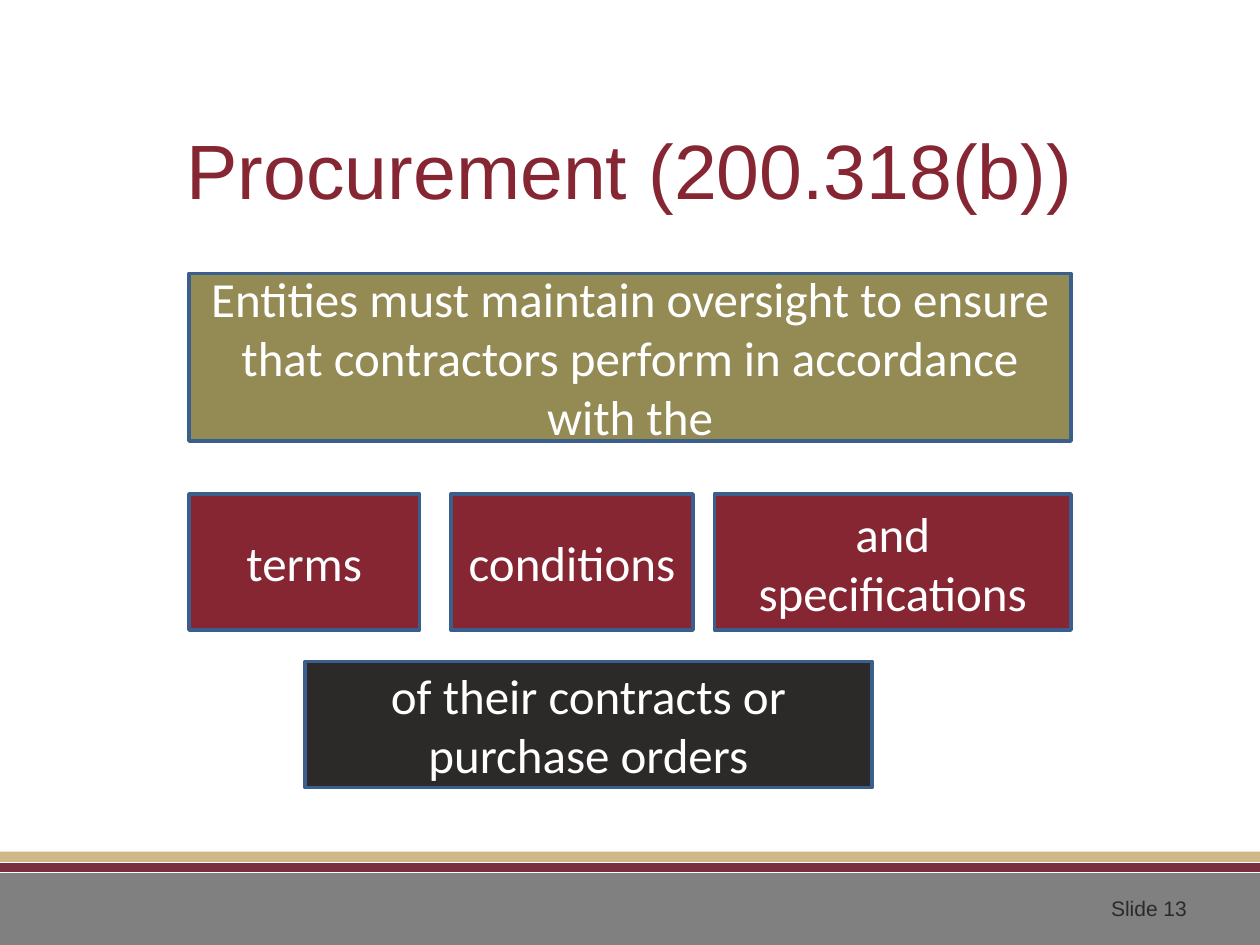
from pptx import Presentation
from pptx.dml.color import RGBColor
from pptx.enum.shapes import MSO_SHAPE
from pptx.enum.text import MSO_ANCHOR, PP_ALIGN
from pptx.util import Inches, Pt

GARNET = "862633"
DARK = "2C2A29"


def color(code):
    return RGBColor.from_string(code)


class Deck:
    head = "Arial"
    body = "Calibri"
    edge = "3A5F8C"

    def __init__(self, slide):
        self.slide = slide

    def put_text(self, frame, text, font, size, ink, align):
        frame.text = text
        para = frame.paragraphs[0]
        para.alignment = align
        for run in para.runs:
            run.font.name = font
            run.font.size = Pt(size)
            run.font.color.rgb = color(ink)

    def shape(self, kind, area, fill):
        item = self.slide.shapes.add_shape(kind, *map(Inches, area))
        item.shadow.inherit = False
        item.fill.solid()
        item.fill.fore_color.rgb = color(fill)
        return item

    def band(self, top, height, fill):
        item = self.shape(MSO_SHAPE.RECTANGLE, (0, top, 10, height), fill)
        item.line.fill.background()

    def box(self, text, area, fill):
        item = self.shape(MSO_SHAPE.FLOWCHART_PROCESS, area, fill)
        item.line.color.rgb = color(self.edge)
        item.line.width = Pt(2)
        frame = item.text_frame
        frame.word_wrap = True
        frame.vertical_anchor = MSO_ANCHOR.MIDDLE
        self.put_text(frame, text, self.body, 28, "FFFFFF", PP_ALIGN.CENTER)

    def title(self, text, area):
        item = self.slide.shapes.title
        item.left, item.top, item.width, item.height = map(Inches, area)
        frame = item.text_frame
        frame.vertical_anchor = MSO_ANCHOR.MIDDLE
        self.put_text(frame, text, self.head, 44, GARNET, PP_ALIGN.CENTER)

    def label(self, text, area):
        item = self.slide.shapes.add_textbox(*map(Inches, area))
        item.text_frame.word_wrap = False
        self.put_text(item.text_frame, text, self.head, 12, DARK,
                      PP_ALIGN.LEFT)


def main():
    prs = Presentation()
    prs.slide_width, prs.slide_height = Inches(10), Inches(7.5)
    deck = Deck(prs.slides.add_slide(prs.slide_layouts[5]))

    for band in ((6.93, 0.57, "808080"), (6.85, 0.07, "782F40"),
                 (6.76, 0.08, "CEB888")):
        deck.band(*band)
    deck.label("Slide 13", (8.72, 7.06, 0.83, 0.3))

    deck.title("Procurement (200.318(b))", (0.5, 0.75, 9, 1.17))
    deck.box("Entities must maintain oversight to ensure that contractors "
             "perform in accordance with the", (1.5, 2.17, 7, 1.33), "948A54")
    for text, left, width in (("terms", 1.5, 1.83), ("conditions", 3.58, 1.92),
                              ("and specifications", 5.67, 2.83)):
        deck.box(text, (left, 3.92, width, 1.08), GARNET)
    deck.box("of their contracts or purchase orders",
             (2.42, 5.25, 4.5, 1), DARK)

    prs.save("out.pptx")


if __name__ == "__main__":
    main()
